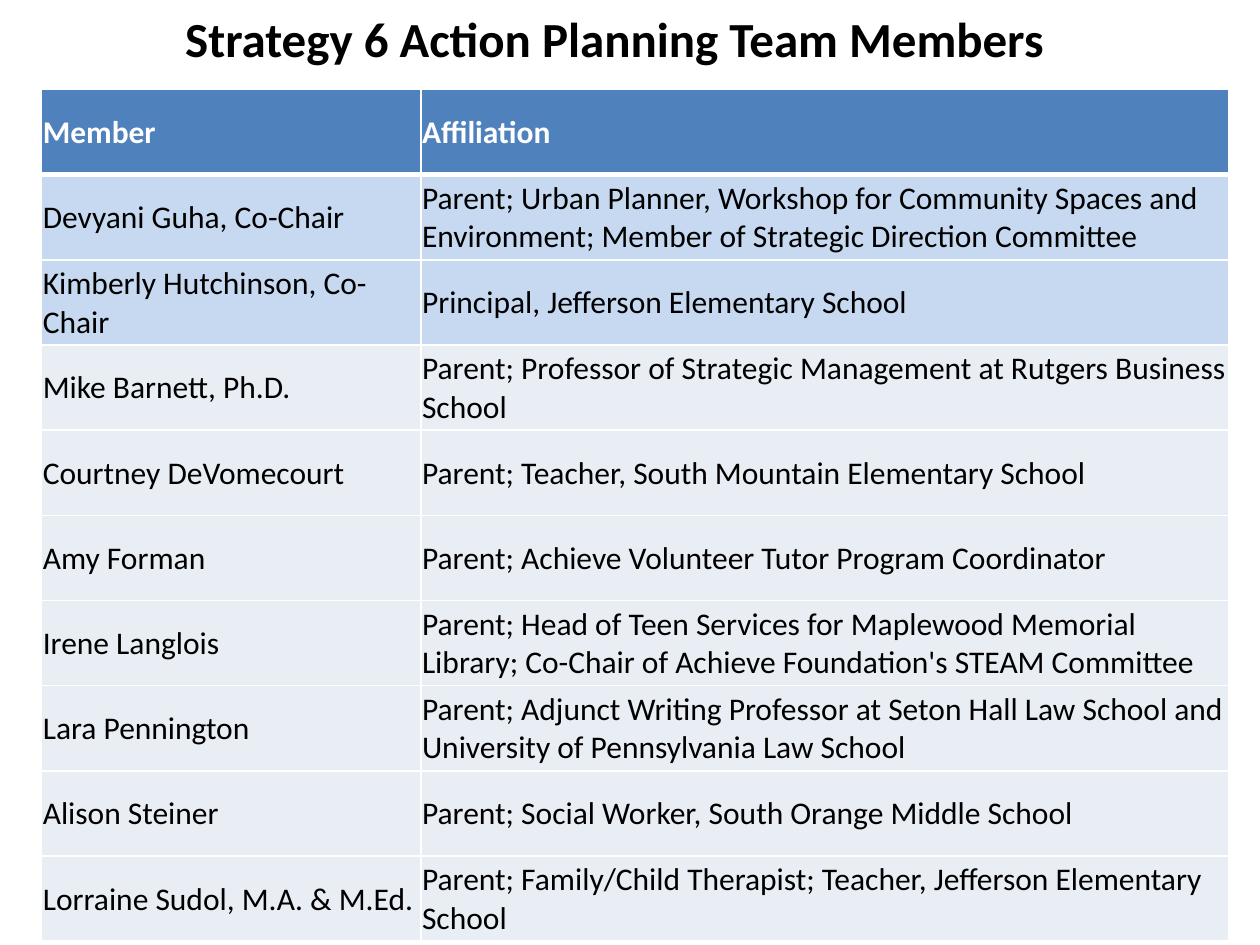
from dataclasses import dataclass

from lxml import etree
from pptx import Presentation
from pptx import util as u
from pptx.dml.color import RGBColor
from pptx.enum import text
from pptx.oxml.ns import qn


@dataclass(frozen=True)
class Theme:
    font: str = "Calibri"
    title_size: int = 28
    body_size: int = 18
    ink: str = "000000"
    paper: str = "FFFFFF"
    header: str = "4F81BD"
    chair: str = "C6D9F1"
    member: str = "E9EDF4"
    rule: float = 1
    header_rule: float = 3


THEME = Theme()
WIDTH, HEIGHT = u.Inches(10), u.Inches(7.5)
COLUMN_WIDTHS = (3.01, 6.41)
TABLE_HEIGHT = 6.76
CHAIRS = 2
ROWS = [
    ("Member", "Affiliation"),
    ("Devyani Guha, Co-Chair",
     "Parent; Urban Planner, Workshop for Community Spaces and "
     "Environment; Member of Strategic Direction Committee"),
    ("Kimberly Hutchinson, Co-Chair", "Principal, Jefferson Elementary School"),
    ("Mike Barnett, Ph.D.",
     "Parent; Professor of Strategic Management at Rutgers Business School"),
    ("Courtney DeVomecourt", "Parent; Teacher, South Mountain Elementary School"),
    ("Amy Forman", "Parent; Achieve Volunteer Tutor Program Coordinator"),
    ("Irene Langlois",
     "Parent; Head of Teen Services for Maplewood Memorial Library; "
     "Co-Chair of Achieve Foundation's STEAM Committee"),
    ("Lara Pennington",
     "Parent; Adjunct Writing Professor at Seton Hall Law School and "
     "University of Pennsylvania Law School"),
    ("Alison Steiner", "Parent; Social Worker, South Orange Middle School"),
    ("Lorraine Sudol, M.A. & M.Ed.",
     "Parent; Family/Child Therapist; Teacher, Jefferson Elementary School"),
]


def style_text(frame, size, color, bold):
    for para in frame.paragraphs:
        for span in para.runs:
            span.font.name = THEME.font
            span.font.size = u.Pt(size)
            span.font.bold = bold
            span.font.color.rgb = RGBColor.from_string(color)


def add_title(page, wording):
    box = page.shapes.add_textbox(u.Inches(0.75), u.Inches(0.02),
                                  u.Inches(8.25), u.Inches(0.57))
    frame = box.text_frame
    frame.word_wrap = True
    frame.text = wording
    frame.paragraphs[0].alignment = text.PP_ALIGN.CENTER
    style_text(frame, THEME.title_size, THEME.ink, True)


def set_borders(cell, top, bottom):
    """Draw the four cell edges; they must come before the fill in the XML."""
    properties = cell._tc.get_or_add_tcPr()
    edges = {"lnL": THEME.rule, "lnR": THEME.rule, "lnT": top, "lnB": bottom}
    for position, (edge, points) in enumerate(edges.items()):
        line = etree.Element(qn(f"a:{edge}"), w=str(u.Pt(points)))
        fill = etree.SubElement(line, qn("a:solidFill"))
        etree.SubElement(fill, qn("a:srgbClr"), val=THEME.paper)
        properties.insert(position, line)


def fill_cell(cell, wording, row):
    is_header = row == 0
    if is_header:
        background = THEME.header
    else:
        background = THEME.chair if row <= CHAIRS else THEME.member
    cell.text = wording
    cell.vertical_anchor = text.MSO_ANCHOR.MIDDLE
    cell.margin_left = cell.margin_right = cell.margin_top = u.Inches(0.01)
    cell.margin_bottom = 0
    cell.fill.solid()
    cell.fill.fore_color.rgb = RGBColor.from_string(background)
    style_text(cell.text_frame, THEME.body_size,
               THEME.paper if is_header else THEME.ink, is_header)
    set_borders(cell,
                top=THEME.header_rule if row == 1 else THEME.rule,
                bottom=THEME.header_rule if is_header else THEME.rule)


def add_member_table(page, rows):
    table = page.shapes.add_table(
        len(rows), len(COLUMN_WIDTHS), u.Inches(0.33), u.Inches(0.71),
        u.Inches(sum(COLUMN_WIDTHS)), u.Inches(TABLE_HEIGHT)).table
    for column, width in zip(table.columns, COLUMN_WIDTHS):
        column.width = u.Inches(width)
    for row, entries in enumerate(rows):
        for column, wording in enumerate(entries):
            fill_cell(table.cell(row, column), wording, row)


def main():
    deck = Presentation()
    deck.slide_width, deck.slide_height = WIDTH, HEIGHT
    page = deck.slides.add_slide(deck.slide_layouts[6])

    # Heading
    add_title(page, "Strategy 6 Action Planning Team Members")

    # Team list, co-chairs first
    add_member_table(page, ROWS)

    deck.save("out.pptx")


if __name__ == "__main__":
    main()
